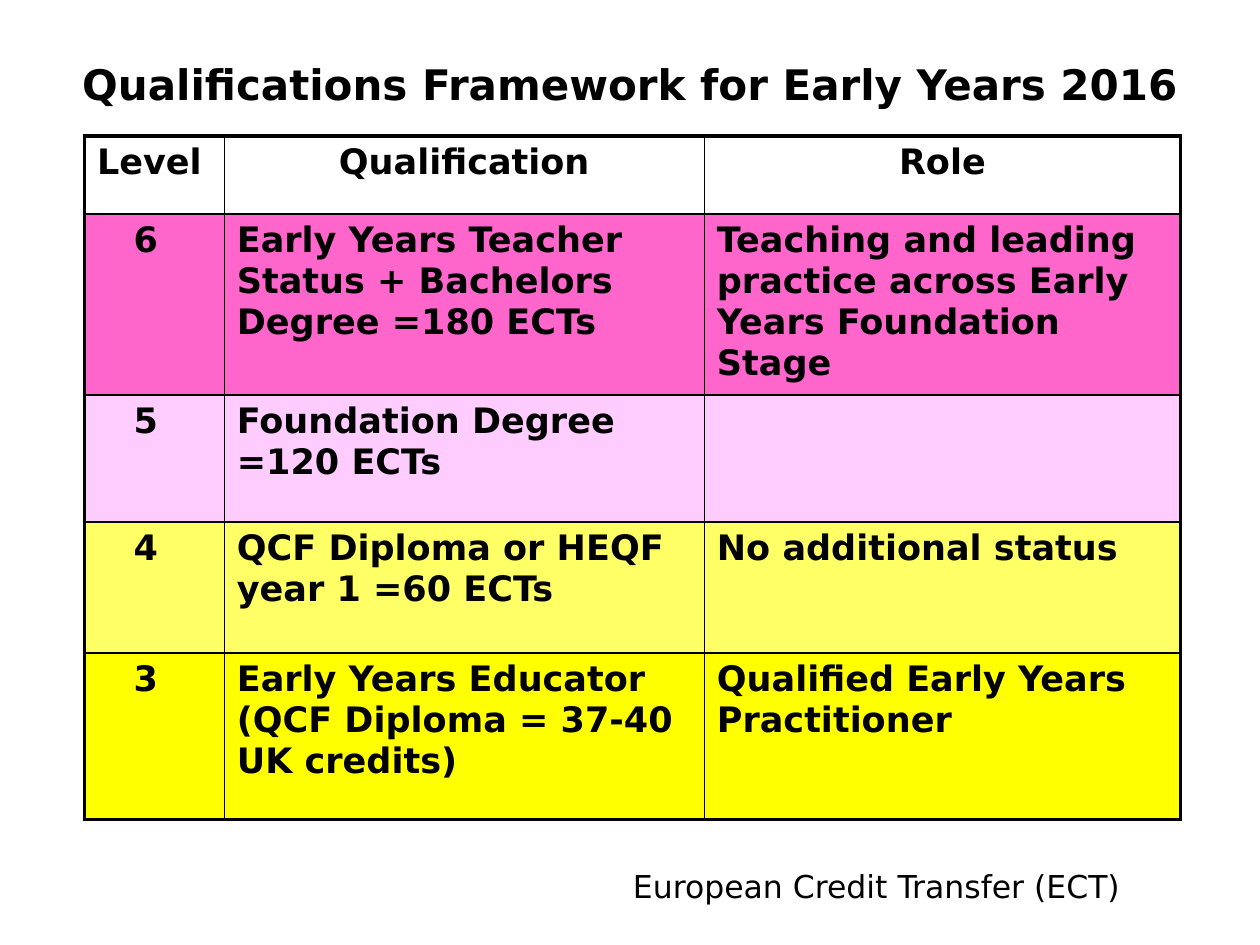
from lxml import etree
from pptx import Presentation
from pptx.dml.color import RGBColor
from pptx.enum.text import MSO_ANCHOR, PP_ALIGN
from pptx.oxml.ns import qn
from pptx.util import Inches, Pt

CENTER, LEFT, RIGHT = PP_ALIGN.CENTER, PP_ALIGN.LEFT, PP_ALIGN.RIGHT
MIDDLE, TOP = MSO_ANCHOR.MIDDLE, MSO_ANCHOR.TOP
BLACK = RGBColor(0x00, 0x00, 0x00)
WHITE = RGBColor(0xFF, 0xFF, 0xFF)
PINK = RGBColor(0xFF, 0x66, 0xCC)
PALE = RGBColor(0xFF, 0xCC, 0xFF)
LEMON = RGBColor(0xFF, 0xFF, 0x66)
YELLOW = RGBColor(0xFF, 0xFF, 0x00)
FONT = "DejaVu Sans"
THIN, THICK = Pt(1), Pt(2.25)
COLS = (1.11, 3.81, 3.78)
ROWS = (
    (0.62, WHITE, ("Level", "Qualification", "Role")),
    (1.36, PINK, ("6", "Early Years Teacher Status + Bachelors Degree =180 ECTs",
                  "Teaching and leading practice across Early Years Foundation Stage")),
    (1.01, PALE, ("5", "Foundation Degree =120 ECTs", "")),
    (1.04, LEMON, ("4", "QCF Diploma or HEQF year 1 =60 ECTs", "No additional status")),
    (1.32, YELLOW, ("3", "Early Years Educator (QCF Diploma = 37-40 UK credits)",
                    "Qualified Early Years Practitioner")),
)


def set_text(frame, text, size, bold, align):
    """Fill a text frame with one formatted paragraph."""
    frame.text = text
    para = frame.paragraphs[0]
    para.alignment = align
    font = para.font
    for run in para.runs:
        font = run.font
    font.name, font.size, font.bold = FONT, Pt(size), bold
    font.color.rgb = BLACK


def add_text(slide, box, text, size, bold, align, anchor):
    """Add a wrapped text box and return its frame."""
    frame = slide.shapes.add_textbox(*map(Inches, box)).text_frame
    frame.word_wrap = True
    frame.vertical_anchor = anchor
    set_text(frame, text, size, bold, align)
    return frame


def set_edges(cell, widths):
    """Draw the left, right, top and bottom borders of a cell."""
    props = cell._tc.get_or_add_tcPr()
    for i, (side, width) in enumerate(zip("LRTB", widths)):
        line = etree.Element(qn(f"a:ln{side}"), w=str(width))
        fill = etree.SubElement(line, qn("a:solidFill"))
        etree.SubElement(fill, qn("a:srgbClr"), val=str(BLACK))
        props.insert(i, line)


def add_grid(slide, box):
    """Add the table of levels, qualifications and roles."""
    table = slide.shapes.add_table(len(ROWS), len(COLS), *map(Inches, box)).table
    table.first_row = table.horz_banding = False
    for col, width in zip(table.columns, COLS):
        col.width = Inches(width)
    last_row, last_col = len(ROWS) - 1, len(COLS) - 1
    for r, (height, color, texts) in enumerate(ROWS):
        table.rows[r].height = Inches(height)
        for c, text in enumerate(texts):
            cell = table.cell(r, c)
            cell.fill.solid()
            cell.fill.fore_color.rgb = color
            cell.vertical_anchor = TOP
            cell.margin_left = Inches(0.39 if r and c == 0 else 0.1)
            set_text(cell.text_frame, text, 20, True, CENTER if r == 0 and c else LEFT)
            outer = (c == 0, c == last_col, r == 0, r == last_row)
            set_edges(cell, [THICK if edge else THIN for edge in outer])


def main():
    """Build and save the slide."""
    deck = Presentation()
    deck.slide_width, deck.slide_height = Inches(10), Inches(7.5)
    slide = deck.slides.add_slide(deck.slide_layouts[6])
    add_text(slide, (0, 0, 10, 1.33), "Qualifications Framework for Early Years 2016",
             24, True, CENTER, MIDDLE)
    add_grid(slide, (0.67, 1.08, sum(COLS), sum(row[0] for row in ROWS)))
    note = add_text(slide, (2, 6.83, 7.48, 0.4), "European Credit Transfer (ECT)",
                    18, False, RIGHT, TOP)
    note.margin_right = Inches(0.59)
    deck.save("out.pptx")


if __name__ == "__main__":
    main()
